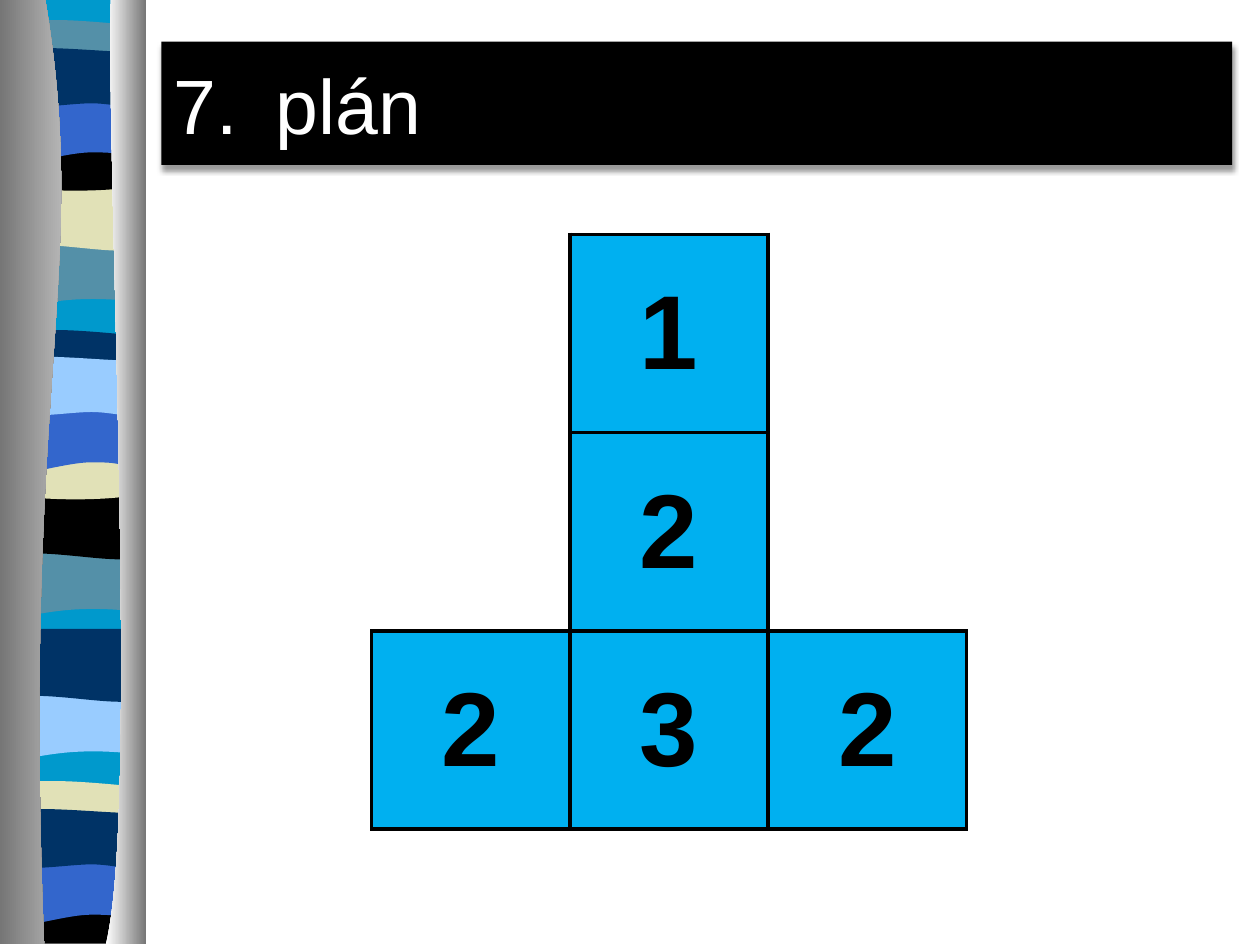
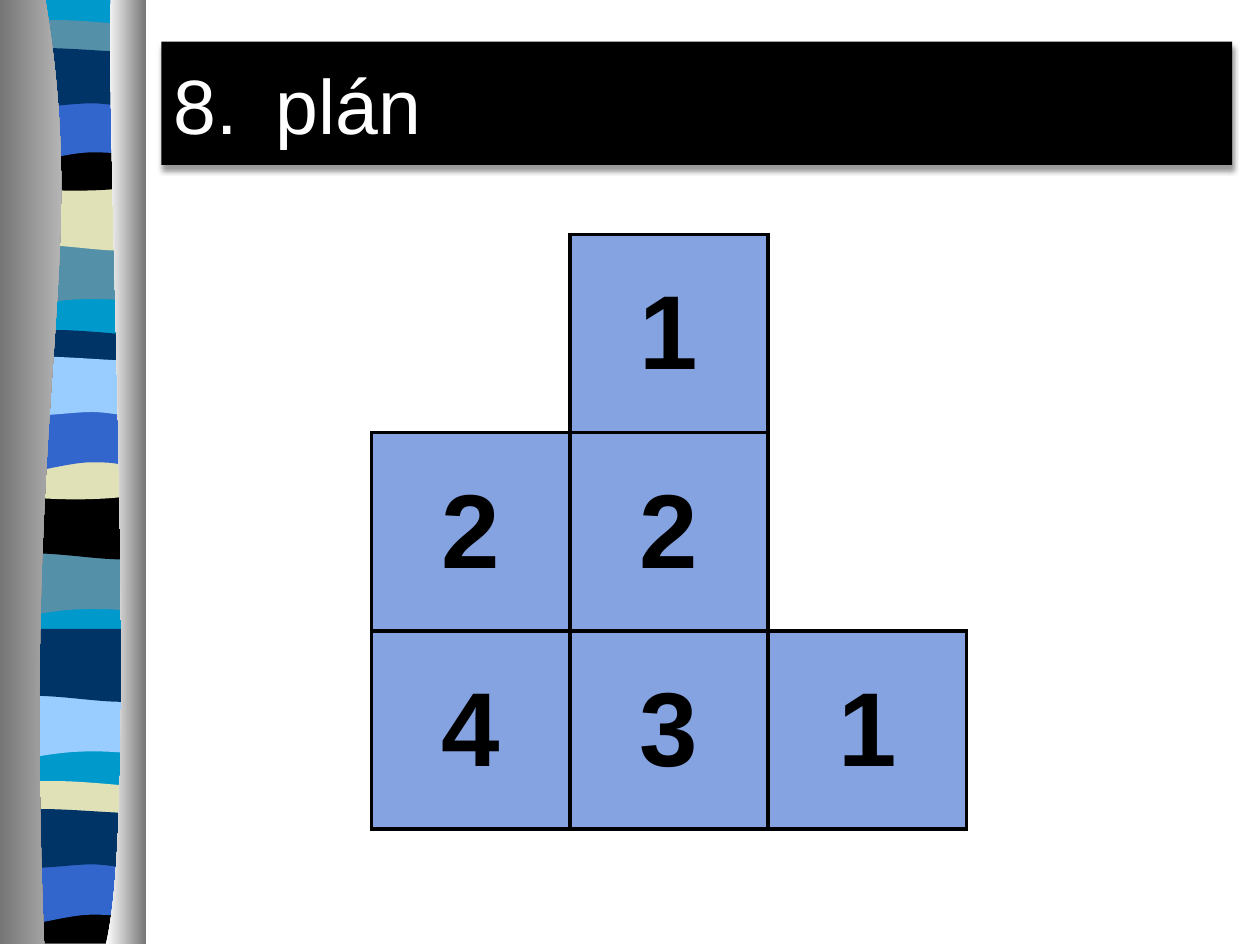
from dataclasses import dataclass
from typing import NamedTuple

from lxml import etree
from pptx import Presentation
from pptx import util as u
from pptx.dml.color import RGBColor
from pptx.enum import text
from pptx.oxml import ns


@dataclass(frozen=True)
class Theme:
    font: str = "Arial"
    title_size: int = 44
    number_size: int = 60
    border_width: float = 2.25
    black: str = "000000"
    white: str = "FFFFFF"
    sky: str = "0099CC"
    teal: str = "5490A8"
    sand: str = "E1E1B7"
    navy: str = "003366"
    blue: str = "3366CC"
    pale: str = "99CCFF"
    dark_grey: str = "767676"
    light_grey: str = "D3D3D3"
    plan_cyan: str = "00B0F0"
    plan_blue: str = "85A3E0"


THEME = Theme()
TITLE_BOX = (1.28, 0.33, 8.5, 0.98)
TITLE_INDENT = 0.81
PLAN_LEFT, PLAN_TOP, PLAN_SIZE = 2.95, 1.86, 4.72

# An outline is a list of points: two numbers end a straight side,
# six numbers are the two handles and the end of a curved one.
Outline = list[tuple[float, ...]]

BACKDROP: Outline = [(1.14, 0), (1.14, 7.47), (0.05, 7.47), (0.05, 0)]
DIP: Outline = [(1.14, 0), (1.14, 0.47), (0.39, 0.39, 0.24, 0.55, 0.05, 0.47), (0.05, 0)]
SWELL: Outline = [(1.14, 0), (1.14, 0.47), (0.96, 0.55, 0.39, 0.41, 0.05, 0.47), (0.05, 0)]
RIBBON: Outline = [(1.14, 0), (1.14, 0.24), (0.96, 0.29, 0.24, 0.29, 0.05, 0.24), (0.05, 0),
                   (0.12, -0.05, 0.29, -0.04, 0.47, -0.04), (0.65, -0.04, 1, -0.01, 1.14, 0)]
SAG: Outline = [(1.14, 0), (1.14, 0.32), (0.96, 0.38, 0.24, 0.38, 0.05, 0.32), (0.05, 0),
                (0.71, 0.05, 0.9, 0, 1.14, 0)]
ARCH: Outline = [(1.14, 0), (1.14, 0.57), (0.97, 0.47, 0.9, 0.47, 0.72, 0.47),
                 (0.54, 0.47, 0.22, 0.57, 0.05, 0.57), (0.05, 0)]
WAVE: Outline = [(1.14, 0), (1.14, 0.31), (1.07, 0.36, 0.9, 0.31, 0.72, 0.31),
                 (0.54, 0.31, 0.17, 0.36, 0.05, 0.31), (0.05, 0),
                 (0.21, -0.05, 0.79, 0, 0.97, 0), (1.15, 0, 1.1, 0, 1.14, 0)]
FOOT: Outline = [(1.13, 0), (1.13, 0.37), (0.05, 0.37), (0.05, 0), (0.71, 0.05, 0.9, 0, 1.13, 0)]
LEFT_CURTAIN: Outline = [(0.36, 0), (0.72, 2.16, 0.17, 2.96, 0.35, 7.49), (0, 7.49), (0, 0)]
RIGHT_CURTAIN: Outline = [(0.88, 0), (0.84, 1.25, 1.11, 6.46, 0.84, 7.49), (1.16, 7.49), (1.16, 0)]


class Band(NamedTuple):
    outline: Outline
    top: float
    colors: tuple[str, ...]  # one for a plain fill, two for a left-to-right gradient
    stretched: bool = True  # whether the corners alone, without handles, span the box


BANDS = [
    Band(BACKDROP, 0, (THEME.sky,)),
    Band(DIP, 1.85, (THEME.teal,)),
    Band(SWELL, 1.41, (THEME.sand,)),
    Band(RIBBON, 0.21, (THEME.teal,)),
    Band(SAG, 1.08, (THEME.black,)),
    Band(ARCH, 0.74, (THEME.blue,)),
    Band(WAVE, 0.46, (THEME.navy,)),
    Band(DIP, 4.31, (THEME.teal,)),
    Band(SWELL, 3.86, (THEME.black,)),
    Band(RIBBON, 2.67, (THEME.navy,)),
    Band(SAG, 3.53, (THEME.sand,)),
    Band(ARCH, 3.2, (THEME.blue,)),
    Band(WAVE, 2.91, (THEME.pale,)),
    Band(DIP, 5.44, (THEME.pale,)),
    Band(SWELL, 4.99, (THEME.navy,)),
    Band(RIBBON, 6.25, (THEME.sand,)),
    Band(FOOT, 7.12, (THEME.black,)),
    Band(ARCH, 6.79, (THEME.blue,)),
    Band(WAVE, 6.5, (THEME.navy,)),
    Band(LEFT_CURTAIN, 0, (THEME.dark_grey, THEME.light_grey), stretched=False),
    Band(RIGHT_CURTAIN, 0, (THEME.white, THEME.dark_grey), stretched=False),
]


class Plan(NamedTuple):
    number: int
    color: str
    rows: tuple[str, ...]  # one character a cell, a space for an empty one


PLANS = [
    Plan(7, THEME.plan_cyan, (" 1 ", " 2 ", "232")),
    Plan(8, THEME.plan_blue, (" 1 ", "22 ", "431")),
]


def rgb(color: str) -> RGBColor:
    return RGBColor.from_string(color)


def add_xml(parent, tag: str, **attributes):
    element = etree.SubElement(parent, ns.qn(tag))
    for name, value in attributes.items():
        element.set(name, str(value))
    return element


def write_text(frame, content: str, *, size: int, color: str, bold: bool = False,
               align=text.PP_ALIGN.LEFT):
    paragraph = frame.paragraphs[0]
    paragraph.alignment = align
    run = paragraph.add_run()
    run.text = content
    run.font.name = THEME.font
    run.font.size = u.Pt(size)
    run.font.bold = bold
    run.font.color.rgb = rgb(color)
    return paragraph


def bounds(points) -> tuple[int, int, int, int]:
    """Return left, top, width and height of the points."""
    xs, ys = zip(*points)
    return min(xs), min(ys), max(xs) - min(xs), max(ys) - min(ys)


def bend_sides(shape, sides, frame: tuple[int, int, int, int]) -> None:
    """Redraw the outline with its curves, measured within the frame."""
    left, top, width, height = frame
    outline = next(shape.element.iter(ns.qn("a:path")))
    outline.set("w", str(width))
    outline.set("h", str(height))
    for child in list(outline):
        outline.remove(child)
    for index, side in enumerate(sides):
        tag = "a:moveTo" if index == 0 else "a:lnTo" if len(side) == 1 else "a:cubicBezTo"
        segment = add_xml(outline, tag)
        for x, y in side:
            add_xml(segment, "a:pt", x=x - left, y=y - top)
    add_xml(outline, "a:close")


def draw_band(slide, band: Band):
    sides = [[(u.Inches(x), u.Inches(band.top + y)) for x, y in zip(step[::2], step[1::2])]
             for step in band.outline]
    corners = [side[-1] for side in sides]
    hull = bounds([point for side in sides for point in side])
    builder = slide.shapes.build_freeform(*corners[0])
    builder.add_line_segments(corners[1:], close=True)
    shape = builder.convert_to_shape()
    bend_sides(shape, sides, bounds(corners) if band.stretched else hull)
    shape.left, shape.top, shape.width, shape.height = hull
    shape.shadow.inherit = False
    shape.line.fill.background()
    if len(band.colors) == 1:
        shape.fill.solid()
        shape.fill.fore_color.rgb = rgb(band.colors[0])
    else:
        shape.fill.gradient()
        shape.fill.gradient_angle = 0
        for stop, color in zip(shape.fill.gradient_stops, band.colors):
            stop.color.rgb = rgb(color)
    return shape


def decorate_layout(layout, slide) -> None:
    """Draw the bands on a slide, then move them behind everything on its layout."""
    for index, band in enumerate(BANDS):
        element = draw_band(slide, band).element
        element.nvSpPr.cNvPr.set("id", str(100 + index))
        layout.shapes.element.insert(2 + index, element)


def format_title(slide, number: int) -> None:
    title = slide.shapes.title
    title.left, title.top, title.width, title.height = map(u.Inches, TITLE_BOX)
    title.fill.solid()
    title.fill.fore_color.rgb = rgb(THEME.black)
    frame = title.text_frame
    frame.auto_size = text.MSO_AUTO_SIZE.NONE
    frame.vertical_anchor = text.MSO_ANCHOR.MIDDLE
    paragraph = write_text(frame, "plán", size=THEME.title_size, color=THEME.white)

    properties = paragraph._p.get_or_add_pPr()
    properties.set("marL", str(u.Inches(TITLE_INDENT)))
    properties.set("indent", str(-u.Inches(TITLE_INDENT)))
    add_xml(properties, "a:buFont", typeface=THEME.font)
    add_xml(properties, "a:buAutoNum", type="arabicPeriod", startAt=number)

    effects = add_xml(title.element.spPr, "a:effectLst")
    shadow = add_xml(effects, "a:outerShdw", blurRad=u.Pt(3), dist=u.Pt(3),
                     dir=4800000, algn="tl", rotWithShape=0)
    add_xml(add_xml(shadow, "a:srgbClr", val=THEME.black), "a:alpha", val=40000)


def is_filled(plan: Plan, row: int, column: int) -> bool:
    return (0 <= row < len(plan.rows) and 0 <= column < len(plan.rows[row])
            and plan.rows[row][column] != " ")


def draw_borders(cell, plan: Plan, row: int, column: int) -> None:
    """Line each edge that touches a filled cell and clear the others."""
    properties = cell._tc.get_or_add_tcPr()
    neighbours = {"a:lnL": (0, -1), "a:lnR": (0, 1), "a:lnT": (-1, 0), "a:lnB": (1, 0)}
    for tag, (down, right) in neighbours.items():
        line = add_xml(properties, tag, w=u.Pt(THEME.border_width))
        if is_filled(plan, row, column) or is_filled(plan, row + down, column + right):
            add_xml(add_xml(line, "a:solidFill"), "a:srgbClr", val=THEME.black)
        else:
            add_xml(line, "a:noFill")


def draw_plan(slide, plan: Plan) -> None:
    count = len(plan.rows)
    size = u.Inches(PLAN_SIZE)
    table = slide.shapes.add_table(count, count, u.Inches(PLAN_LEFT), u.Inches(PLAN_TOP),
                                   size, size).table
    table.first_row = table.horz_banding = False
    for column in table.columns:
        column.width = u.Inches(PLAN_SIZE / count)
    for row_index, row in enumerate(table.rows):
        row.height = u.Inches(PLAN_SIZE / count)
        for column_index, cell in enumerate(row.cells):
            draw_borders(cell, plan, row_index, column_index)
            if not is_filled(plan, row_index, column_index):
                cell.fill.background()
                continue
            cell.fill.solid()
            cell.fill.fore_color.rgb = rgb(plan.color)
            cell.vertical_anchor = text.MSO_ANCHOR.MIDDLE
            write_text(cell.text_frame, plan.rows[row_index][column_index],
                       size=THEME.number_size, color=THEME.black, bold=True,
                       align=text.PP_ALIGN.CENTER)


def main() -> None:
    presentation = Presentation()
    presentation.slide_width, presentation.slide_height = u.Inches(10), u.Inches(7.5)
    layout = presentation.slide_layouts.get_by_name("Title Only")
    slides = [presentation.slides.add_slide(layout) for _ in PLANS]
    decorate_layout(layout, slides[0])
    for slide, plan in zip(slides, PLANS):
        format_title(slide, plan.number)
        draw_plan(slide, plan)
    presentation.save("out.pptx")


if __name__ == "__main__":
    main()
